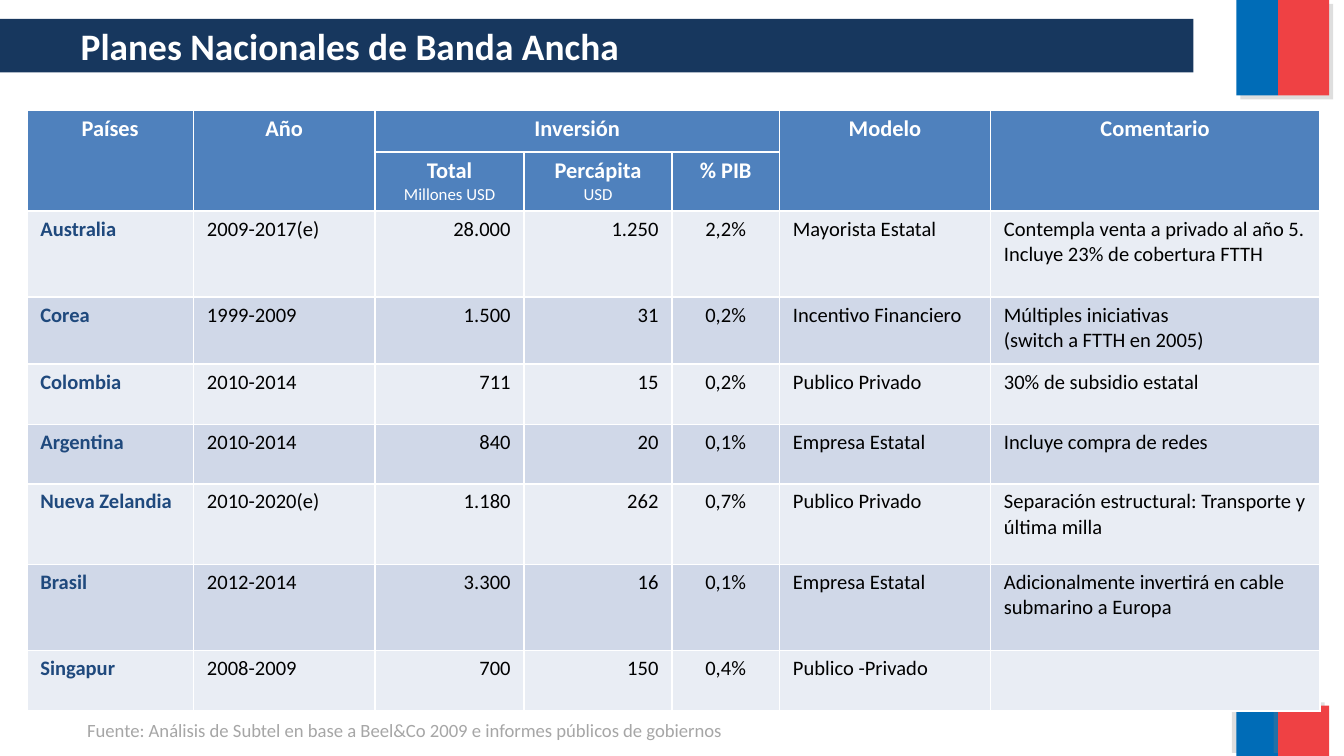
from lxml import etree
from pptx import Presentation
from pptx.dml.color import RGBColor
from pptx.enum.shapes import MSO_SHAPE
from pptx.enum.text import MSO_ANCHOR, PP_ALIGN
from pptx.oxml.ns import qn
from pptx.util import Inches, Pt

LEFT, CENTER, RIGHT = PP_ALIGN.LEFT, PP_ALIGN.CENTER, PP_ALIGN.RIGHT
MIDDLE = MSO_ANCHOR.MIDDLE
RECTANGLE = MSO_SHAPE.RECTANGLE

UNIT = 0.1  # inches per grid column and grid row
SLIDE_COLUMNS, SLIDE_ROWS = 100, 56.25
FONT = "Calibri"
COLORS = {
    "flag_blue": "006CB7",
    "flag_red": "EF4144",
    "shadow": "808080",
    "banner": "17375E",
    "header": "4F81BD",
    "light_band": "E9EDF4",
    "dark_band": "D0D8E8",
    "country": "1F497D",
    "body": "000000",
    "white": "FFFFFF",
    "source": "A6A6A6",
}

COLUMN_WIDTHS = [12.4, 13.5, 11.1, 11, 8, 15.7, 24.5]
ROW_HEIGHTS = [3.1, 4.4, 6.4, 5, 4.5, 4.4, 6, 6.4, 4.5]
BODY_ALIGNMENTS = [LEFT, LEFT, RIGHT, RIGHT, CENTER, LEFT, LEFT]
HEADERS = [
    ["Países", "Año", "Inversión", "", "", "Modelo", "Comentario"],
    ["", "", "Total\nMillones USD", "Percápita\nUSD", "% PIB", "", ""],
]
MERGES = [(0, 0, 1, 0), (0, 1, 1, 1), (0, 2, 0, 4), (0, 5, 1, 5), (0, 6, 1, 6)]
PLANS = [
    ["Australia", "2009-2017(e)", "28.000", "1.250", "2,2%", "Mayorista Estatal",
     "Contempla venta a privado al año 5. Incluye 23% de cobertura FTTH"],
    ["Corea", "1999-2009", "1.500", "31", "0,2%", "Incentivo Financiero",
     "Múltiples iniciativas\v(switch a FTTH en 2005)"],
    ["Colombia", "2010-2014", "711", "15", "0,2%", "Publico Privado",
     "30% de subsidio estatal"],
    ["Argentina", "2010-2014", "840", "20", "0,1%", "Empresa Estatal",
     "Incluye compra de redes"],
    ["Nueva Zelandia", "2010-2020(e)", "1.180", "262", "0,7%", "Publico Privado",
     "Separación estructural: Transporte y última milla"],
    ["Brasil", "2012-2014", "3.300", "16", "0,1%", "Empresa Estatal",
     "Adicionalmente invertirá en cable submarino a Europa"],
    ["Singapur", "2008-2009", "700", "150", "0,4%", "Publico -Privado", ""],
]


def grid(count):
    return Inches(count * UNIT)


def rgb(color):
    return RGBColor.from_string(COLORS[color])


class SlideBuilder:
    def __init__(self, slide):
        self.slide = slide

    def format_paragraph(self, paragraph, size, color, bold=False, alignment=LEFT):
        paragraph.alignment = alignment
        for run in paragraph.runs:
            run.font.name = FONT
            run.font.size = Pt(size)
            run.font.bold = bold
            run.font.color.rgb = rgb(color)

    def rectangle(self, left, top, width, height, color):
        shape = self.slide.shapes.add_shape(RECTANGLE, *map(grid, (left, top, width, height)))
        shape.shadow.inherit = False
        shape.fill.solid()
        shape.fill.fore_color.rgb = rgb(color)
        shape.line.fill.background()
        return shape

    def flag_block(self, left, top, width, height, color, shadow_angle):
        shape = self.rectangle(left, top, width, height, color)
        effects = shape.element.spPr.find(qn("a:effectLst"))
        shadow = etree.SubElement(effects, qn("a:outerShdw"), blurRad="0", dist=str(Pt(3)),
                                  dir=str(shadow_angle * 60000), algn="ctr", rotWithShape="0")
        tint = etree.SubElement(shadow, qn("a:srgbClr"), val=COLORS["shadow"])
        etree.SubElement(tint, qn("a:alpha"), val="25000")

    def banner(self, left, top, width, height, text, indent):
        shape = self.rectangle(left, top, width, height, "banner")
        frame = shape.text_frame
        frame.margin_left = grid(indent)
        frame.vertical_anchor = MIDDLE
        frame.text = text
        self.format_paragraph(frame.paragraphs[0], 20, "white", bold=True)

    def text(self, left, top, width, height, text, size, color):
        box = self.slide.shapes.add_textbox(*map(grid, (left, top, width, height)))
        box.text_frame.word_wrap = True
        box.text_frame.text = text
        self.format_paragraph(box.text_frame.paragraphs[0], size, color)

    def cell(self, cell, text, fill):
        properties = cell._tc.get_or_add_tcPr()
        for side in ("a:lnL", "a:lnR", "a:lnT", "a:lnB"):
            border = etree.SubElement(properties, qn(side), w=str(Pt(1)))
            line_fill = etree.SubElement(border, qn("a:solidFill"))
            etree.SubElement(line_fill, qn("a:srgbClr"), val=COLORS["white"])
        cell.fill.solid()
        cell.fill.fore_color.rgb = rgb(fill)
        cell.margin_left = cell.margin_right = Inches(0.1)
        cell.margin_top = cell.margin_bottom = Inches(0.04)
        cell.text_frame.text = text
        return cell.text_frame.paragraphs

    def table(self, left, top):
        size = sum(COLUMN_WIDTHS), sum(ROW_HEIGHTS)
        frame = self.slide.shapes.add_table(len(ROW_HEIGHTS), len(COLUMN_WIDTHS),
                                            *map(grid, (left, top, *size)))
        table = frame.table
        for column, width in zip(table.columns, COLUMN_WIDTHS):
            column.width = grid(width)
        for row, height in zip(table.rows, ROW_HEIGHTS):
            row.height = grid(height)

        # Header: the second line of a cell is its unit
        for r, labels in enumerate(HEADERS):
            for c, label in enumerate(labels):
                for i, paragraph in enumerate(self.cell(table.cell(r, c), label, "header")):
                    self.format_paragraph(paragraph, 9 if i else 12, "white", i == 0, CENTER)
        for first_row, first_column, last_row, last_column in MERGES:
            table.cell(first_row, first_column).merge(table.cell(last_row, last_column))

        # Body: alternating bands, country names in bold
        for r, plan in enumerate(PLANS):
            band = "dark_band" if r % 2 else "light_band"
            for c, value in enumerate(plan):
                paragraph = self.cell(table.cell(r + len(HEADERS), c), value, band)[0]
                color = "body" if c else "country"
                self.format_paragraph(paragraph, 11, color, c == 0, BODY_ALIGNMENTS[c])


def main():
    presentation = Presentation()
    presentation.slide_width = grid(SLIDE_COLUMNS)
    presentation.slide_height = grid(SLIDE_ROWS)
    builder = SlideBuilder(presentation.slides.add_slide(presentation.slide_layouts[6]))

    # Two-colour blocks in the right-hand corners
    for top, height, shadow_angle in ((0, 7.1, 45), (52.5, 3.75, 215)):
        builder.flag_block(92, top, 3.1, height, "flag_blue", shadow_angle)
        builder.flag_block(95.1, top, 3.8, height, "flag_red", shadow_angle)

    # Plans by country
    builder.table(2, 8.2)

    # Source and title
    builder.text(5.5, 53, 78.1, 2.7,
                 "Fuente: Análisis de Subtel en base a Beel&Co 2009 e informes públicos de gobiernos",
                 10, "source")
    builder.banner(0, 1.4, 88.8, 4, "Planes Nacionales de Banda Ancha", 6)

    presentation.save("out.pptx")


if __name__ == "__main__":
    main()
